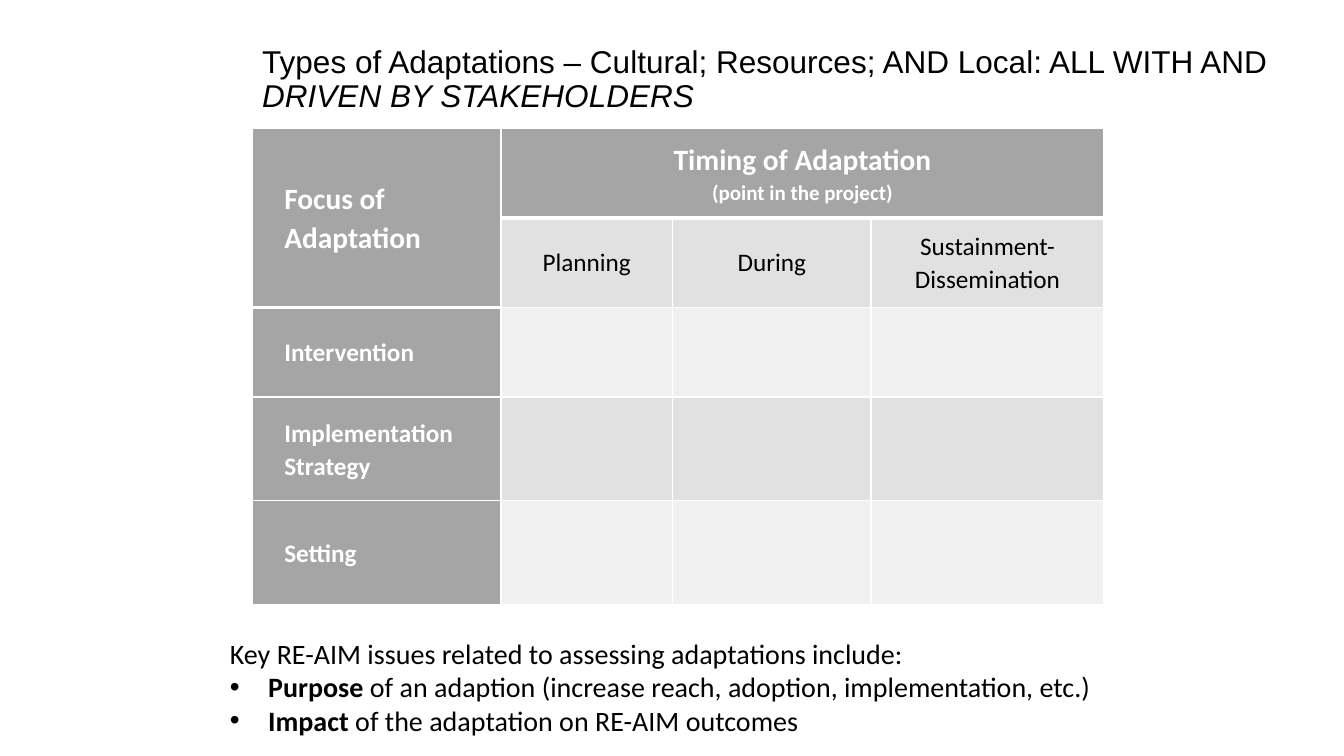
from dataclasses import dataclass

from pptx import Presentation
from pptx.dml.color import RGBColor
from pptx.enum.text import MSO_ANCHOR as Anchor, MSO_AUTO_SIZE as AutoSize, PP_ALIGN as Align
from pptx.oxml.ns import qn
from pptx.util import Inches, Pt
from lxml.etree import SubElement


@dataclass(frozen=True)
class Theme:
    heading_font: str = "Arial"
    text_font: str = "Calibri"
    black: str = "000000"
    white: str = "FFFFFF"
    header: str = "A5A5A5"
    dark_band: str = "E1E1E1"
    light_band: str = "F0F0F0"
    title_size: float = 22.5
    header_size: float = 21
    note_size: float = 15
    cell_size: float = 18
    list_size: float = 20
    thin_line: float = 1
    thick_line: float = 3


@dataclass(frozen=True)
class Line:
    text: str
    size: float
    space_after: float = 0


@dataclass(frozen=True)
class TableCell:
    row: int
    column: int
    lines: tuple[Line, ...]
    is_header: bool = True
    row_span: int = 1
    column_span: int = 1
    line_spacing: float = 1.07


@dataclass(frozen=True)
class Issue:
    lead: str
    rest: str
    bullet: bool = True


THEME = Theme()
COLUMN_WIDTHS = (2.47, 1.7, 1.97, 2.31)
ROW_HEIGHTS = (0.89, 0.89, 0.89, 1.03, 1.03)

CELLS = (
    TableCell(0, 0, (Line("Focus of Adaptation", THEME.header_size),), row_span=2),
    TableCell(0, 1, (Line("Timing of Adaptation", THEME.header_size),
                     Line("(point in the project)", THEME.note_size, 6)), column_span=3),
    TableCell(1, 1, (Line("Planning", THEME.cell_size),), False, line_spacing=1),
    TableCell(1, 2, (Line("During", THEME.cell_size),), False, line_spacing=1),
    TableCell(1, 3, (Line("Sustainment- Dissemination", THEME.cell_size),), False),
    TableCell(2, 0, (Line("Intervention", THEME.cell_size),)),
    TableCell(3, 0, (Line("Implementation", THEME.cell_size),
                     Line("Strategy", THEME.cell_size))),
    TableCell(4, 0, (Line("Setting", THEME.cell_size),)),
)

ISSUES = (
    Issue("", "Key RE-AIM issues related to assessing adaptations include:", False),
    Issue("Purpose", " of an adaption (increase reach, adoption, implementation, etc.)"),
    Issue("Impact ", "of the adaptation on RE-AIM outcomes"),
)


def place(shape, left: float, top: float, width: float, height: float) -> None:
    shape.left, shape.top = Inches(left), Inches(top)
    shape.width, shape.height = Inches(width), Inches(height)


def set_font(font, name: str, size: float, color: str, bold: bool = False) -> None:
    font.name, font.size, font.bold = name, Pt(size), bold
    font.color.rgb = RGBColor.from_string(color)


def set_indent(paragraph, margin: float, first_line: float = 0) -> None:
    properties = paragraph._p.get_or_add_pPr()
    properties.set("marL", str(Inches(margin)))
    properties.set("indent", str(Inches(first_line)))


def set_bullet(paragraph, bullet: bool) -> None:
    properties = paragraph._p.get_or_add_pPr()
    if bullet:
        SubElement(properties, qn("a:buFont"), typeface="Arial")
        SubElement(properties, qn("a:buChar"), char="•")
    else:
        SubElement(properties, qn("a:buNone"))


def has_thick_bottom(row: int, column: int) -> bool:
    return row == 0 or (row, column) == (1, 0)


def set_borders(cell, row: int, column: int) -> None:
    thick_sides = {"T": row > 0 and has_thick_bottom(row - 1, column),
                   "B": has_thick_bottom(row, column)}
    for side in "LRTB":
        width = THEME.thick_line if thick_sides.get(side) else THEME.thin_line
        line = SubElement(cell._tc.get_or_add_tcPr(), qn(f"a:ln{side}"), w=str(Pt(width)))
        SubElement(SubElement(line, qn("a:solidFill")), qn("a:srgbClr"), val=THEME.white)


def band_color(row: int, column: int) -> str:
    if row == 0 or column == 0:
        return THEME.header
    return THEME.dark_band if row % 2 else THEME.light_band


def fill_cell(table, content: TableCell) -> None:
    cell = table.cell(content.row, content.column)
    if content.row_span > 1 or content.column_span > 1:
        cell.merge(table.cell(content.row + content.row_span - 1,
                              content.column + content.column_span - 1))
    cell.vertical_anchor = Anchor.MIDDLE
    cell.margin_left = cell.margin_right = Inches(0.06)
    cell.margin_top = cell.margin_bottom = 0
    cell.text = "\n".join(line.text for line in content.lines)
    for paragraph, line in zip(cell.text_frame.paragraphs, content.lines):
        paragraph.line_spacing = content.line_spacing
        paragraph.space_after = Pt(line.space_after)
        if content.column == 0:
            set_indent(paragraph, 0.26)
        else:
            paragraph.alignment = Align.CENTER
        color = THEME.white if content.is_header else THEME.black
        set_font(paragraph.font, THEME.text_font, line.size, color, content.is_header)


def add_title(slide) -> None:
    title = slide.shapes.title
    place(title, 2.5, 0.42, 10.83, 0.75)
    frame = title.text_frame
    frame.auto_size = AutoSize.NONE
    frame.vertical_anchor = Anchor.MIDDLE
    paragraph = frame.paragraphs[0]
    paragraph.alignment, paragraph.line_spacing = Align.LEFT, 0.9
    paragraph.add_run().text = ("Types of Adaptations – Cultural; Resources; AND Local: "
                                "ALL WITH AND ")
    stakeholders = paragraph.add_run()
    stakeholders.text = "DRIVEN BY STAKEHOLDERS"
    stakeholders.font.italic = True
    set_font(paragraph.font, THEME.heading_font, THEME.title_size, THEME.black)


def add_adaptation_table(slide) -> None:
    table = slide.shapes.add_table(
        len(ROW_HEIGHTS), len(COLUMN_WIDTHS), Inches(2.5), Inches(1.27),
        Inches(sum(COLUMN_WIDTHS)), Inches(sum(ROW_HEIGHTS))).table
    table.first_row = table.horz_banding = False
    for column, width in zip(table.columns, COLUMN_WIDTHS):
        column.width = Inches(width)
    for row, height in zip(table.rows, ROW_HEIGHTS):
        row.height = Inches(height)
    for row in range(len(ROW_HEIGHTS)):
        for column in range(len(COLUMN_WIDTHS)):
            cell = table.cell(row, column)
            set_borders(cell, row, column)
            cell.fill.solid()
            cell.fill.fore_color.rgb = RGBColor.from_string(band_color(row, column))
    for content in CELLS:
        fill_cell(table, content)


def add_issues(slide) -> None:
    body = slide.placeholders[1]
    place(body, 2.18, 6.26, 9.08, 1.11)
    frame = body.text_frame
    frame.auto_size = AutoSize.SHAPE_TO_FIT_TEXT
    for index, issue in enumerate(ISSUES):
        paragraph = frame.add_paragraph() if index else frame.paragraphs[0]
        paragraph.space_before = 0
        set_indent(paragraph, *((0.38, -0.38) if issue.bullet else (0, 0)))
        set_bullet(paragraph, issue.bullet)
        set_font(paragraph.font, THEME.text_font, THEME.list_size, THEME.black)
        if issue.lead:
            lead = paragraph.add_run()
            lead.text, lead.font.bold = issue.lead, True
        paragraph.add_run().text = issue.rest


def main() -> None:
    presentation = Presentation()
    presentation.slide_width, presentation.slide_height = Inches(13.33), Inches(7.5)
    slide = presentation.slides.add_slide(presentation.slide_layouts[1])
    add_title(slide)
    add_adaptation_table(slide)
    add_issues(slide)
    presentation.save("out.pptx")


if __name__ == "__main__":
    main()
